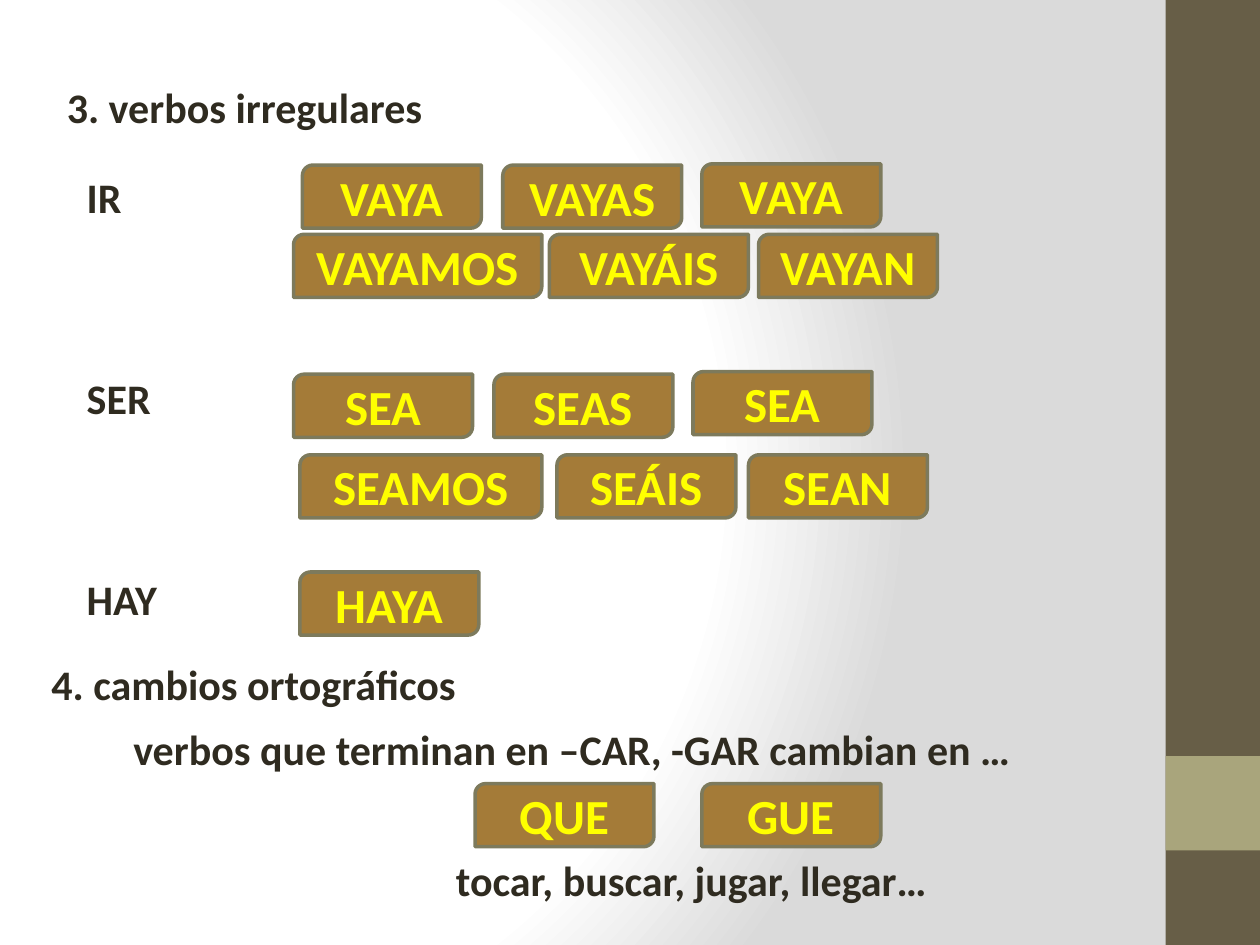
from lxml import etree
from pptx import Presentation
from pptx import util as u
from pptx.dml.color import RGBColor
from pptx.enum import shapes, text
from pptx.oxml.ns import qn

HUES = {"ink": "2F2B20", "chip": "A47B38", "edge": "7D7A5C", "word": "FFFF00",
        "bar": "675E47", "block": "A9A57C", "light": "FFFFFF", "shade": "DADADA"}
FONT = "Calibri"
WIDE, HIGH = u.Inches(10), u.Inches(7.5)
CHIP_W, LINE_H = 14.2, 6.67

# Lengths are percentages of the slide's width and height.
# Each row: top, then (word, left, width, rise above the row)
ROWS = [
    (17.47, [("VAYA", 24, CHIP_W, 0), ("VAYAS", 39.9, CHIP_W, 0),
             ("VAYA", 55.7, CHIP_W, 0.13)]),
    (24.8, [("VAYAMOS", 23.3, 19.7, 0), ("VAYÁIS", 43.6, 15.8, 0),
            ("VAYAN", 60.2, CHIP_W, 0)]),
    (39.6, [("SEA", 23.3, CHIP_W, 0), ("SEAS", 39.2, CHIP_W, 0),
            ("SEA", 55, CHIP_W, 0.27)]),
    (48.13, [("SEAMOS", 23.8, 19.2, 0), ("SEÁIS", 44.2, CHIP_W, 0),
             ("SEAN", 59.4, CHIP_W, 0)]),
    (60.53, [("HAYA", 23.8, CHIP_W, 0)]),
    (82.93, [("QUE", 37.7, CHIP_W, 0), ("GUE", 55.7, CHIP_W, 0)]),
]
NOTES = [
    ("4. cambios ortográficos", 3.1, 69.07, 34.4),
    ("verbos que terminan en –CAR, -GAR cambian en …", 9.6, 75.87, 72.6),
    ("tocar, buscar, jugar, llegar…", 35.2, 89.73, 39.7),
]


def hue(name):
    return RGBColor.from_string(HUES[name])


def area(x, y, w, h):
    """Turn percentages of the slide into lengths."""
    return [int(part * full / 100)
            for part, full in zip((x, y, w, h), (WIDE, HIGH) * 2)]


def write(par, words, size, color):
    run = par.add_run()
    run.text = words
    font = run.font
    font.name, font.size, font.bold = FONT, u.Pt(size), True
    font.color.rgb = hue(color)


def fit(frame):
    frame.word_wrap = False
    frame.auto_size = text.MSO_AUTO_SIZE.SHAPE_TO_FIT_TEXT
    frame.vertical_anchor = text.MSO_ANCHOR.TOP


def paint(slide):
    """Fill the background with a round gradient, shaded at the right."""
    slide.background.fill.gradient()
    grad = slide.background._cSld.find(".//" + qn("a:gradFill"))
    for child in list(grad):
        grad.remove(child)
    stops = etree.SubElement(grad, qn("a:gsLst"))
    for pos, name in ((0, "light"), (75, "light"), (100, "shade")):
        stop = etree.SubElement(stops, qn("a:gs"), pos=str(pos * 1000))
        etree.SubElement(stop, qn("a:srgbClr"), val=HUES[name])
    way = etree.SubElement(grad, qn("a:path"), {"path": "circle"})
    etree.SubElement(way, qn("a:fillToRect"),
                     l="20000", t="50000", r="100000", b="50000")


def block(slide, kind, place, color):
    shape = slide.shapes.add_shape(kind, *area(*place))
    shape.shadow.inherit = False
    shape.fill.solid()
    shape.fill.fore_color.rgb = hue(color)
    shape.line.fill.background()
    return shape


def chip(slide, word, x, y, w):
    shape = block(slide, shapes.MSO_SHAPE.ROUND_2_DIAG_RECTANGLE,
                  (x, y, w, LINE_H), "chip")
    shape.line.color.rgb = hue("edge")
    shape.line.width = u.Pt(2)
    frame = shape.text_frame
    frame.vertical_anchor = text.MSO_ANCHOR.MIDDLE
    par = frame.paragraphs[0]
    par.alignment = text.PP_ALIGN.CENTER
    write(par, word, 28, "word")


def head(slide, words):
    title = slide.shapes.title
    title.left, title.top, title.width, title.height = area(4.3, 8, 30.5, LINE_H)
    fit(title.text_frame)
    par = title.text_frame.paragraphs[0]
    par.alignment = text.PP_ALIGN.LEFT
    par.line_spacing = 1.0
    par.space_before = u.Pt(0)
    write(par, words, 24, "ink")


def label(slide, lines, place, gap=0):
    frame = slide.shapes.add_textbox(*area(*place)).text_frame
    fit(frame)
    for i, line in enumerate(lines):
        par = frame.add_paragraph() if i else frame.paragraphs[0]
        par.space_before = u.Pt(gap if i else 0)
        write(par, line, 24, "ink")


def main():
    deck = Presentation()
    deck.slide_width, deck.slide_height = WIDE, HIGH
    slide = deck.slides.add_slide(deck.slide_layouts[5])
    paint(slide)
    rect = shapes.MSO_SHAPE.RECTANGLE
    block(slide, rect, (92.5, 0, 7.5, 100), "bar")
    block(slide, rect, (92.5, 80, 7.5, 10), "block")
    head(slide, "3. verbos irregulares")
    label(slide, ["IR", "SER", "HAY"], (5.9, 17.47, 7.7, 49.87), gap=86)
    for words, x, y, w in NOTES:
        label(slide, [words], (x, y, w, LINE_H))
    for top, chips in ROWS:
        for word, x, w, rise in chips:
            chip(slide, word, x, top - rise, w)
    deck.save("out.pptx")


if __name__ == "__main__":
    main()
